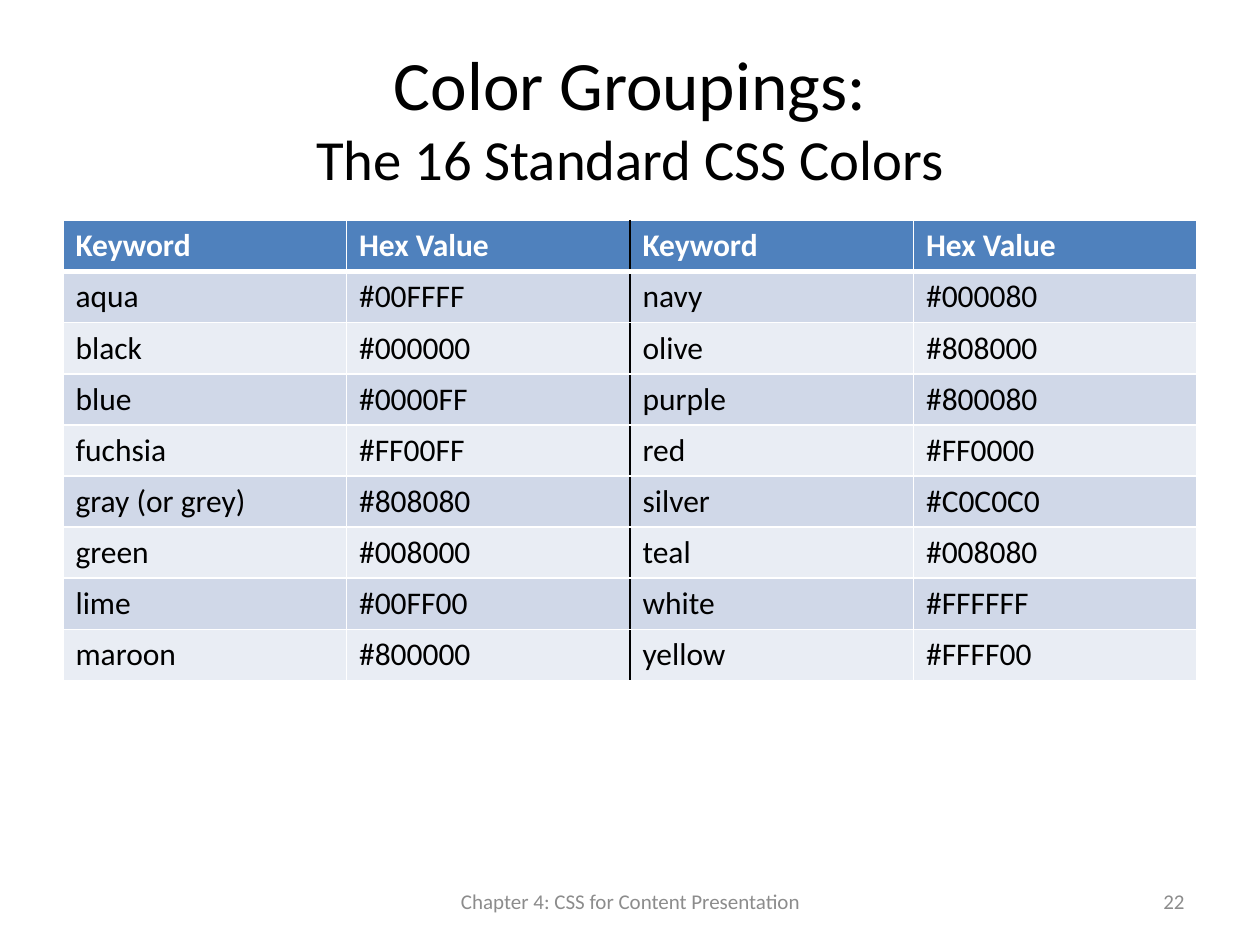
from lxml.etree import fromstring
from pptx import Presentation
from pptx.dml.color import RGBColor as Rgb
from pptx.enum.text import MSO_ANCHOR as Anchor, PP_ALIGN as Align
from pptx.oxml.ns import nsdecls
from pptx.util import Inches, Pt

COLORS = {"text": "000000", "header": "4F81BD", "odd": "D0D8E8",
          "even": "E9EDF4", "rule": "FFFFFF", "divider": "000000",
          "header_text": "FFFFFF", "footer": "8C8C8C"}
ROWS = [
    ("Keyword", "Hex Value", "Keyword", "Hex Value"),
    ("aqua", "#00FFFF", "navy", "#000080"),
    ("black", "#000000", "olive", "#808000"),
    ("blue", "#0000FF", "purple", "#800080"),
    ("fuchsia", "#FF00FF", "red", "#FF0000"),
    ("gray (or grey)", "#808080", "silver", "#C0C0C0"),
    ("green", "#008000", "teal", "#008080"),
    ("lime", "#00FF00", "white", "#FFFFFF"),
    ("maroon", "#800000", "yellow", "#FFFF00"),
]


def style_runs(para, sizes, color, bold=False):
    """Format the paragraph's runs, one size for each run."""
    for span, size in zip(para.runs, sizes):
        span.font.name = "Calibri"
        span.font.size = Pt(size)
        span.font.bold = bold
        span.font.color.rgb = Rgb.from_string(COLORS[color])


def border_cell(cell, sides):
    """Draw borders from (side, color, points) in the order L, R, T, B."""
    for place, (side, color, points) in enumerate(sides):
        cell._tc.get_or_add_tcPr().insert(place, fromstring(
            f'<a:ln{side} {nsdecls("a")} w="{Pt(points)}"><a:solidFill>'
            f'<a:srgbClr val="{COLORS[color]}"/></a:solidFill></a:ln{side}>'))


deck = Presentation()
deck.slide_width, deck.slide_height = Inches(10), Inches(7.5)
page = deck.slides.add_slide(deck.slide_layouts[6])

# Title and footer texts
for text, place, align, sizes, color in [
    ("Color Groupings:\vThe 16 Standard CSS Colors", (0.5, 0.3, 9, 1.25),
     Align.CENTER, (39.6, 32.4), "text"),
    ("Chapter 4: CSS for Content Presentation", (3.42, 6.95, 3.17, 0.4),
     Align.CENTER, (12,), "footer"),
    ("22", (7.17, 6.95, 2.33, 0.4), Align.RIGHT, (12,), "footer"),
]:
    box = page.shapes.add_textbox(*map(Inches, place))
    box.text_frame.word_wrap = True
    box.text_frame.vertical_anchor = Anchor.MIDDLE
    para = box.text_frame.paragraphs[0]
    para.text = text
    para.alignment = align
    style_runs(para, sizes, color)

# Color table, with a dark divider between the two pairs of columns
table = page.shapes.add_table(len(ROWS), len(ROWS[0]), Inches(0.5),
                              Inches(1.75), Inches(9), Inches(3.65)).table
for row, values in enumerate(ROWS):
    is_header = row == 0
    fill = "header" if is_header else "odd" if row % 2 else "even"
    for column, value in enumerate(values):
        cell = table.cell(row, column)
        cell.text = value
        style_runs(cell.text_frame.paragraphs[0], (18,),
                   "header_text" if is_header else "text", is_header)
        cell.fill.solid()
        cell.fill.fore_color.rgb = Rgb.from_string(COLORS[fill])
        border_cell(cell, [
            ("L", "divider" if column == 2 else "rule", 1),
            ("R", "divider" if column == 1 else "rule", 1),
            ("T", "rule", 3 if row == 1 else 1),
            ("B", "rule", 3 if is_header else 1)])

deck.save("out.pptx")
